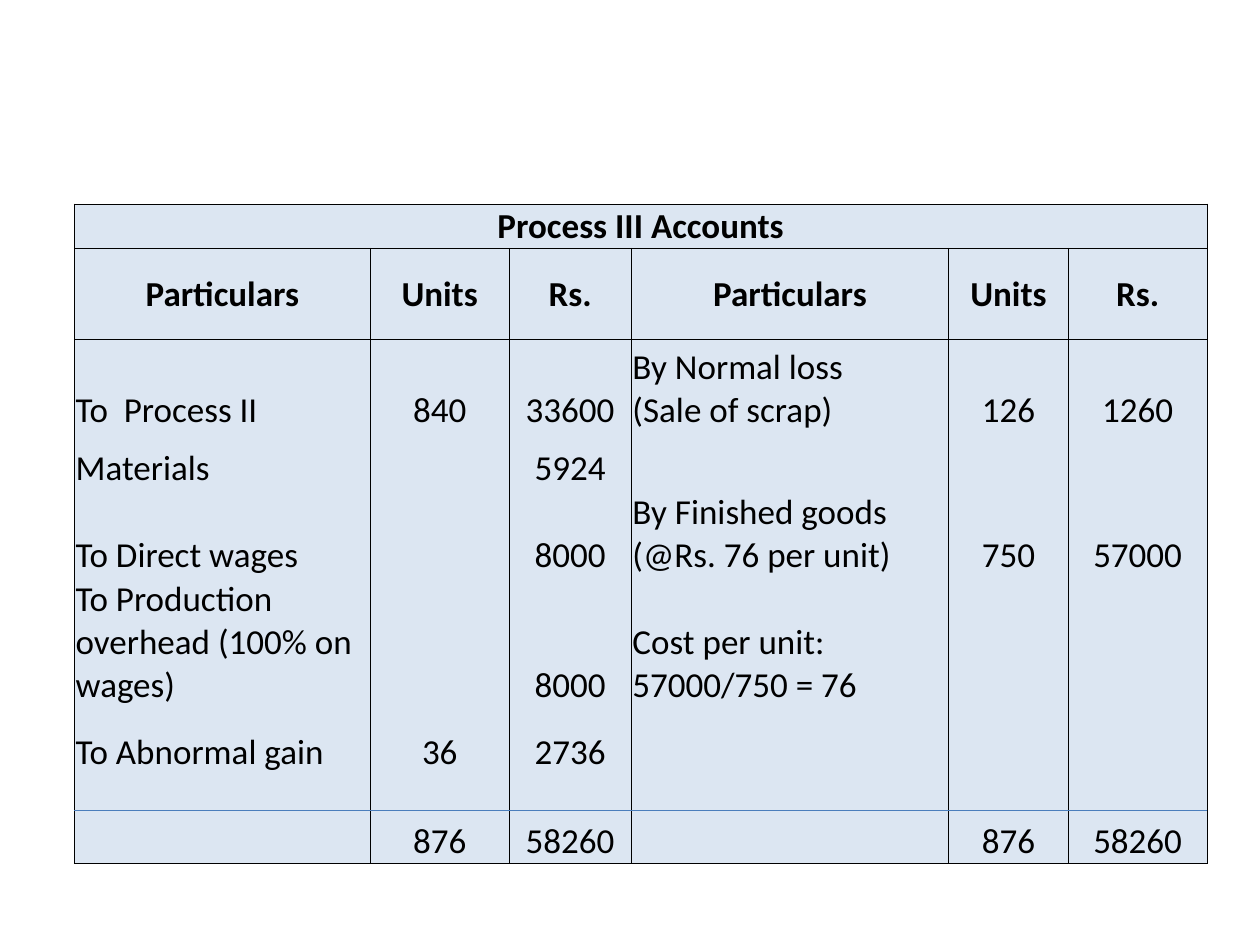
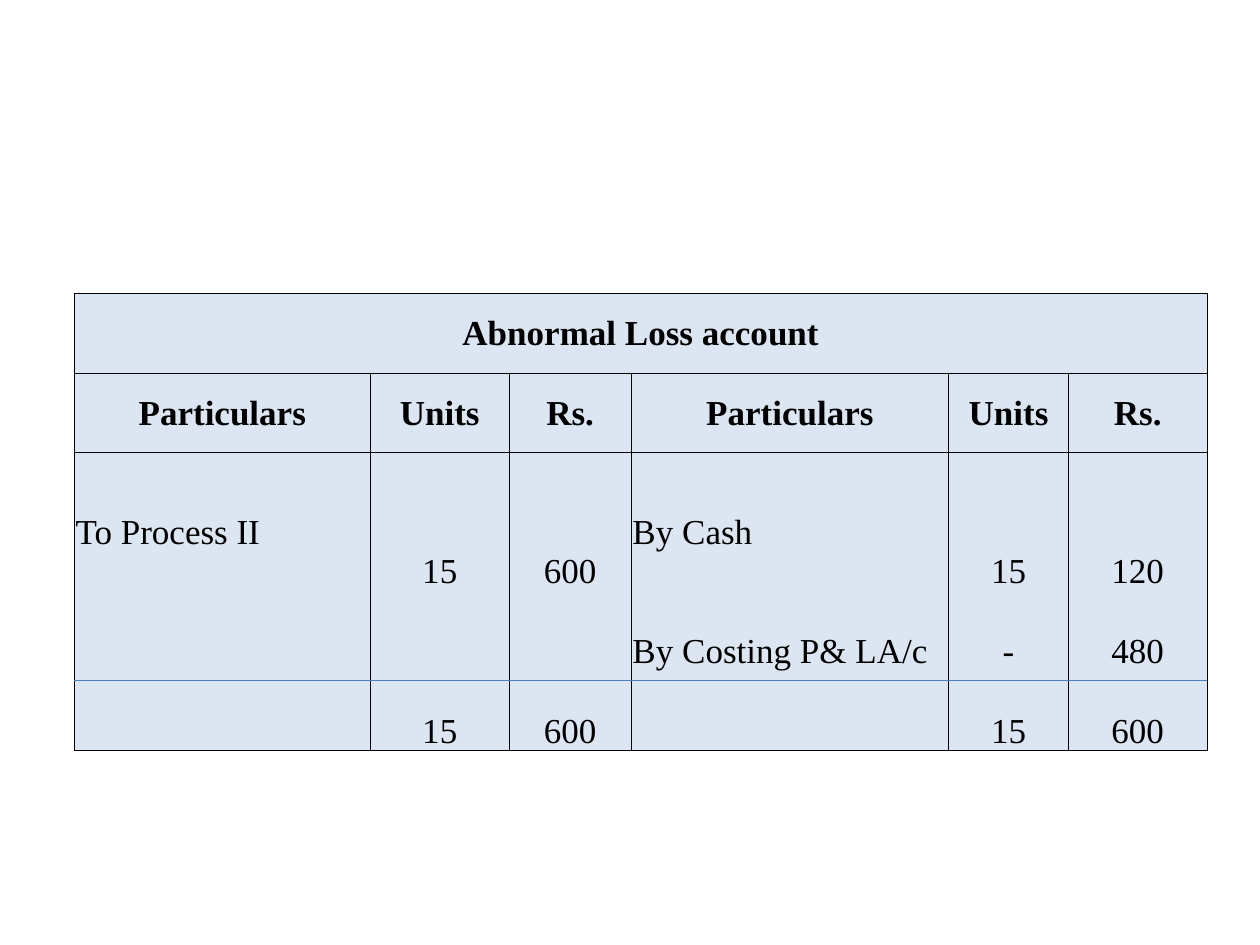
"""Builds two slides, each with one ledger account table."""
from lxml.etree import SubElement
from pptx import Presentation
from pptx.dml.color import RGBColor
from pptx.enum.shapes import MSO_CONNECTOR
from pptx.enum.text import MSO_ANCHOR, PP_ALIGN
from pptx.oxml.ns import qn
from pptx.util import Inches, Pt


def paint(fill, tone):
    fill.solid()
    fill.fore_color.rgb = RGBColor.from_string(tone)


def edge(cell, sides):
    props = cell._tc.get_or_add_tcPr()
    for side in "LRTB":
        rule = SubElement(props, qn("a:ln" + side), w=str(Pt(0.5)))
        if side in sides:
            solid = SubElement(rule, qn("a:solidFill"))
            SubElement(solid, qn("a:srgbClr"), val=INK)
        else:
            SubElement(rule, qn("a:noFill"))


INK, PALE, BLUE = "000000", "DCE6F2", "4B7EBC"
LEFT = 0.59
COLS = [2.35, 1.1, 0.97, 2.52, 0.95, 1.1]
WIDTH = sum(COLS)
HEADS = ["Particulars", "Units", "Rs."] * 2
PADS = {"margin_left": Inches(0.01), "margin_right": Inches(0.01),
        "margin_top": Inches(0.01), "margin_bottom": 0}
LIFT = Inches(0.31)

ledgers = [
    {
        "title": "Process III Accounts", "font": "Calibri",
        "top": 1.62, "rule": 6.43, "lift": [],
        "rows": [0.35, 0.72, 0.74, 0.46, 0.69, 1.03, 0.53, 0.71],
        "body": [
            ["To  Process II", "840", "33600",
             "By Normal loss\n(Sale of scrap)", "126", "1260"],
            ["Materials", "", "5924", "", "", ""],
            ["To Direct wages", "", "8000",
             "By Finished goods (@Rs. 76 per unit)", "750", "57000"],
            ["To Production overhead (100% on wages)", "", "8000",
             "Cost per unit:\n57000/750 = 76", "", ""],
            ["To Abnormal gain", "36", "2736", "", "", ""],
            ["", "876", "58260", "", "876", "58260"],
        ],
    },
    {
        "title": "Abnormal Loss account", "font": "Times New Roman",
        "top": 2.33, "rule": 5.4, "lift": ["To Process II", "By Cash"],
        "rows": [0.63, 0.63, 1.1, 0.64, 0.63],
        "body": [
            ["To Process II", "15", "600", "By Cash", "15", "120"],
            ["", "", "", "By Costing P& LA/c", "-", "480"],
            ["", "15", "600", "", "15", "600"],
        ],
    },
]

deck = Presentation()
deck.slide_width, deck.slide_height = Inches(10), Inches(7.5)

for ledger in ledgers:
    slide = deck.slides.add_slide(deck.slide_layouts[6])
    lines = [[ledger["title"]] + [""] * 5, HEADS] + ledger["body"]
    frame = slide.shapes.add_table(
        len(lines), len(COLS), Inches(LEFT), Inches(ledger["top"]),
        Inches(WIDTH), Inches(sum(ledger["rows"])))
    table = frame.table
    table.first_row = table.horz_banding = False
    for col, width in zip(table.columns, COLS):
        col.width = Inches(width)
    for row, height in zip(table.rows, ledger["rows"]):
        row.height = Inches(height)
    table.cell(0, 0).merge(table.cell(0, len(COLS) - 1))

    for r, line in enumerate(lines):
        head = r < 2
        sides = "LR" + "T" * (r < 3) + "B" * (head or r == len(lines) - 1)
        for c, words in enumerate(line):
            cell = table.cell(r, c)
            edge(cell, sides)
            paint(cell.fill, PALE)
            for name, value in PADS.items():
                setattr(cell, name, value)
            if words in ledger["lift"]:
                cell.margin_bottom = LIFT
            cell.vertical_anchor = MSO_ANCHOR.MIDDLE if head else MSO_ANCHOR.BOTTOM
            if not words:
                continue
            cell.text = words
            style = {"size": Pt(20), "name": ledger["font"], "bold": head}
            for para in cell.text_frame.paragraphs:
                para.alignment = PP_ALIGN.CENTER if head or c % 3 else PP_ALIGN.LEFT
                font = para.runs[0].font
                for name, value in style.items():
                    setattr(font, name, value)
                paint(font.fill, INK)

    rule = slide.shapes.add_connector(
        MSO_CONNECTOR.STRAIGHT, Inches(LEFT), Inches(ledger["rule"]),
        Inches(LEFT + WIDTH), Inches(ledger["rule"]))
    rule.line.width = Pt(0.75)
    paint(rule.line.fill, BLUE)
    SubElement(rule._element.spPr, qn("a:effectLst"))

deck.save("out.pptx")
